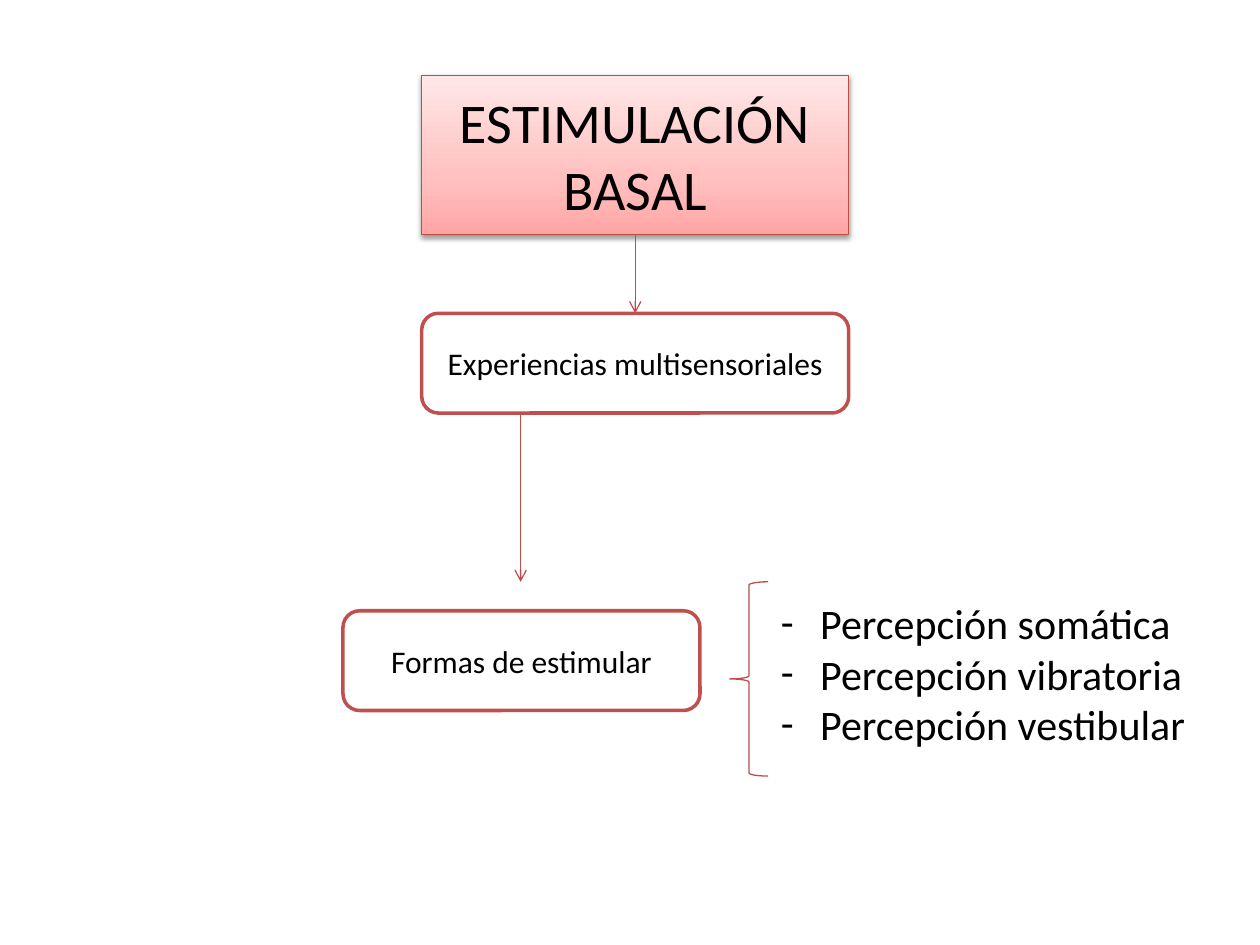
from lxml import etree
from pptx import Presentation
from pptx.dml.color import RGBColor
from pptx.enum import shapes as sh, text as tx
from pptx.oxml import parse_xml
from pptx.oxml.ns import nsdecls, qn
from pptx.util import Pt

# Content: text and box (left, top, width, height) in points
TITLE = ("ESTIMULACIÓN BASAL", (241, 43, 244, 91))
BOXES = [
    ("Experiencias multisensoriales", (241, 179, 244, 57)),
    ("Formas de estimular", (196, 349, 204, 57)),
]
ITEMS = ["Percepción somática", "Percepción vibratoria", "Percepción vestibular"]
LIST = (439, 338, 294, 94)
BRACE = (417, 332.5, 22, 111)
ARROWS = [(363, 134, 363, 179), (297.5, 236, 297.5, 332.5)]
STOPS = [(0, "FFA6A5"), (35, "FFC0BF"), (100, "FFE7E7")]
EDGE, THIN = "C0504D", "BF4C48"


def color(code):
    return RGBColor.from_string(code)


def place(shape, box):
    shape.left, shape.top, shape.width, shape.height = map(Pt, box)


def stroke(line, code, width):
    line.color.rgb = color(code)
    line.width = Pt(width)


def style(frame, size, align):
    frame.word_wrap = True
    frame.auto_size = tx.MSO_AUTO_SIZE.NONE
    for par in frame.paragraphs:
        par.alignment = align
        par.space_before = Pt(0)
        for run in par.runs:
            run.font.name = "Calibri"
            run.font.size = Pt(size)
            run.font.color.rgb = color("000000")


def add_shape(kind, box):
    shape = slide.shapes.add_shape(kind, *map(Pt, box))
    shape.shadow.inherit = False
    return shape


def add_arrow(ends):
    arrow = slide.shapes.add_connector(sh.MSO_CONNECTOR.STRAIGHT, *map(Pt, ends))
    stroke(arrow.line, THIN, 0.75)
    etree.SubElement(arrow.line._get_or_add_ln(), qn("a:tailEnd"), type="arrow")
    etree.SubElement(arrow._element.spPr, qn("a:effectLst"))
    return arrow


prs = Presentation()
prs.slide_width, prs.slide_height = Pt(720), Pt(540)
slide = prs.slides.add_slide(prs.slide_layouts[1])
title, body = slide.placeholders

# Title: rounded box with gradient and soft shadow
label, box = TITLE
place(title, box)
title.text_frame.text = label
title.text_frame.vertical_anchor = tx.MSO_ANCHOR.MIDDLE
style(title.text_frame, 32, tx.PP_ALIGN.CENTER)
stops = "".join(
    f'<a:gs pos="{pos * 1000}"><a:srgbClr val="{code}"/></a:gs>' for pos, code in STOPS
)
ns = nsdecls("a")
props = title._element.spPr
props.append(parse_xml(f'<a:prstGeom {ns} prst="roundRect"><a:avLst/></a:prstGeom>'))
props.append(parse_xml(
    f'<a:gradFill {ns} rotWithShape="1"><a:gsLst>{stops}</a:gsLst>'
    '<a:lin ang="16200000" scaled="1"/></a:gradFill>'))
stroke(title.line, THIN, 0.75)
props.append(parse_xml(
    f'<a:effectLst {ns}><a:outerShdw blurRad="{Pt(3.1)}" dist="{Pt(1.6)}" dir="5400000" '
    'rotWithShape="0"><a:srgbClr val="000000"><a:alpha val="38000"/></a:srgbClr>'
    '</a:outerShdw></a:effectLst>'))

# Outlined boxes
nodes = []
for label, box in BOXES:
    node = add_shape(sh.MSO_SHAPE.ROUNDED_RECTANGLE, box)
    node.fill.solid()
    node.fill.fore_color.rgb = color("FFFFFF")
    stroke(node.line, EDGE, 2)
    node.text_frame.text = label
    node.text_frame.vertical_anchor = tx.MSO_ANCHOR.MIDDLE
    style(node.text_frame, 18, tx.PP_ALIGN.CENTER)
    nodes.append(node)

# Arrows: only the first joins two side middles
first, second = map(add_arrow, ARROWS)
first.begin_connect(title, 2)
first.end_connect(nodes[0], 0)

# Brace and dashed list
brace = add_shape(sh.MSO_SHAPE.LEFT_BRACE, BRACE)
brace.fill.background()
stroke(brace.line, THIN, 0.75)

place(body, LIST)
body.text_frame.text = "\n".join(ITEMS)
style(body.text_frame, 24, tx.PP_ALIGN.LEFT)
for par in body.text_frame.paragraphs:
    props = par._p.get_or_add_pPr()
    props.set("marL", str(Pt(22.5)))
    props.set("indent", str(Pt(-22.5)))
    etree.SubElement(props, qn("a:buFont"), typeface="Calibri")
    etree.SubElement(props, qn("a:buChar"), char="-")

prs.save("out.pptx")
